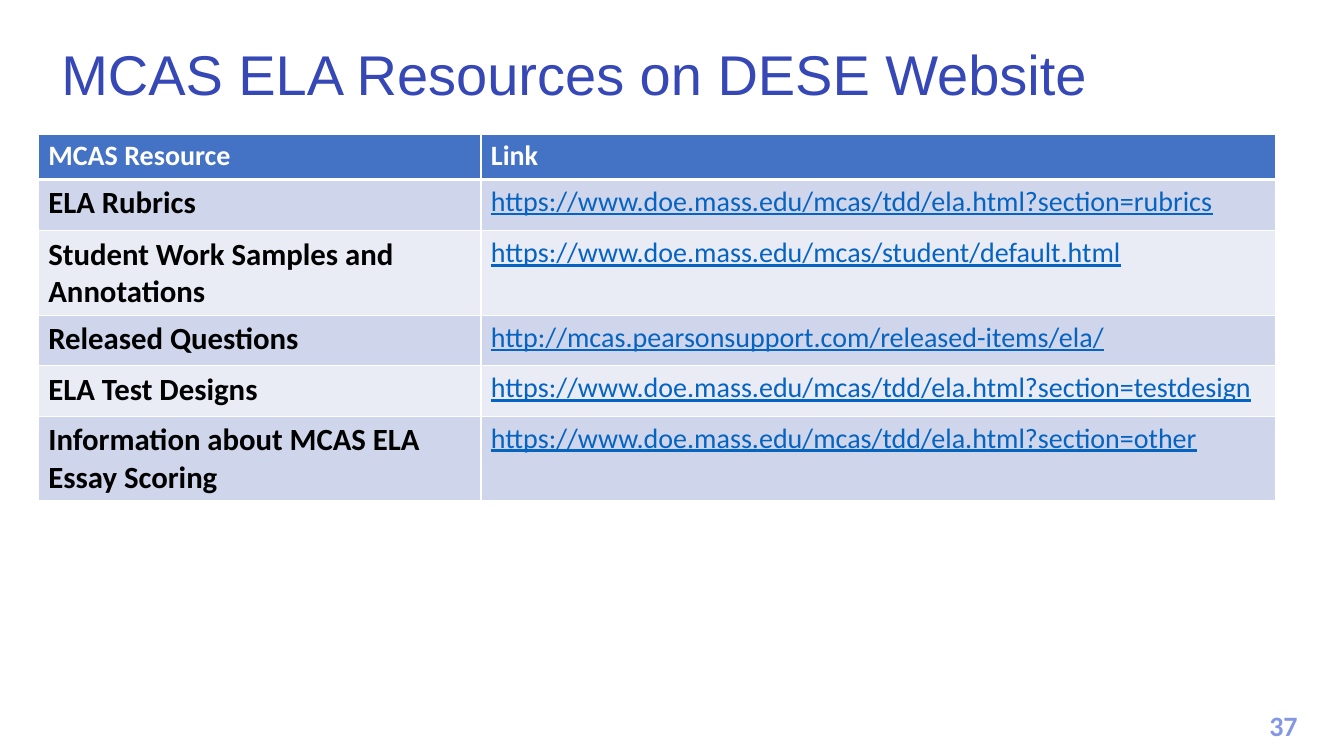
from lxml import etree
from pptx import Presentation
from pptx.dml.color import RGBColor
from pptx.enum import text
from pptx.oxml import ns
from pptx.util import Inches, Pt

WHITE = RGBColor(0xFF, 0xFF, 0xFF)
BLACK = RGBColor(0x00, 0x00, 0x00)
TITLE_BLUE = RGBColor(0x36, 0x47, 0xB6)
NUMBER_BLUE = RGBColor(0x83, 0x97, 0xE7)
HEADER_BLUE = RGBColor(0x44, 0x72, 0xC4)
LINK_BLUE = RGBColor(0x05, 0x63, 0xC1)
BANDS = [RGBColor(0xCF, 0xD5, 0xEA), RGBColor(0xE9, 0xEB, 0xF5)]

HEADINGS = ("MCAS Resource", "Link")
RESOURCES = [
    ("ELA Rubrics", "https://www.doe.mass.edu/mcas/tdd/ela.html?section=rubrics", 0.51),
    ("Student Work Samples and Annotations",
     "https://www.doe.mass.edu/mcas/student/default.html", 0.84),
    ("Released Questions", "http://mcas.pearsonsupport.com/released-items/ela/", 0.5),
    ("ELA Test Designs",
     "https://www.doe.mass.edu/mcas/tdd/ela.html?section=testdesign", 0.5),
    ("Information about MCAS ELA Essay Scoring",
     "https://www.doe.mass.edu/mcas/tdd/ela.html?section=other", 0.84),
]
COLUMN_WIDTHS = (4.39, 7.88)
HEADER_HEIGHT = 0.45


def add_run(paragraph, words, size, color, font="Calibri", bold=False, underline=False):
    run = paragraph.add_run()
    run.text = words
    run.font.name = font
    run.font.size = Pt(size)
    run.font.color.rgb = color
    run.font.bold = bold
    run.font.underline = underline


def add_label(slide, left, top, width, height, anchor):
    frame = slide.shapes.add_textbox(
        Inches(left), Inches(top), Inches(width), Inches(height)).text_frame
    frame.word_wrap = True
    frame.vertical_anchor = anchor
    return frame.paragraphs[0]


def set_borders(cell, bottom):
    properties = cell._tc.get_or_add_tcPr()
    for side, points in (("L", 1), ("R", 1), ("T", 1), ("B", bottom)):
        line = etree.SubElement(properties, ns.qn(f"a:ln{side}"), w=str(Pt(points)))
        fill = etree.SubElement(line, ns.qn("a:solidFill"))
        etree.SubElement(fill, ns.qn("a:srgbClr"), val=str(WHITE))


def fill_cell(cell, words, size, color, background, bottom=1, **style):
    set_borders(cell, bottom)
    cell.fill.solid()
    cell.fill.fore_color.rgb = background
    add_run(cell.text_frame.paragraphs[0], words, size, color, **style)


def add_resources(slide):
    heights = [HEADER_HEIGHT] + [height for _, _, height in RESOURCES]
    table = slide.shapes.add_table(
        len(heights), len(COLUMN_WIDTHS), Inches(0.38), Inches(1.33),
        Inches(sum(COLUMN_WIDTHS)), Inches(sum(heights))).table
    table.horz_banding = False
    for column, width in zip(table.columns, COLUMN_WIDTHS):
        column.width = Inches(width)
    for row, height in zip(table.rows, heights):
        row.height = Inches(height)
    for index, heading in enumerate(HEADINGS):
        fill_cell(table.cell(0, index), heading, 20, WHITE, HEADER_BLUE, 3, bold=True)
    for index, (resource, link, _) in enumerate(RESOURCES):
        band = BANDS[index % 2]
        fill_cell(table.cell(index + 1, 0), resource, 22, BLACK, band, bold=True)
        fill_cell(table.cell(index + 1, 1), link, 20, LINK_BLUE, band, underline=True)


def main():
    deck = Presentation()
    deck.slide_width = Inches(13.33)
    deck.slide_height = Inches(7.5)
    slide = deck.slides.add_slide(deck.slide_layouts[6])

    page_number = add_label(slide, 12.42, 6.98, 0.62, 0.44, text.MSO_ANCHOR.TOP)
    page_number.alignment = text.PP_ALIGN.CENTER
    add_run(page_number, "37", 20, NUMBER_BLUE, bold=True)

    title = add_label(slide, 0.51, 0.24, 12.02, 0.88, text.MSO_ANCHOR.BOTTOM)
    title.line_spacing = 0.9
    add_run(title, "MCAS ELA Resources on DESE Website", 40, TITLE_BLUE, font="Arial")

    add_resources(slide)
    deck.save("out.pptx")


if __name__ == "__main__":
    main()
